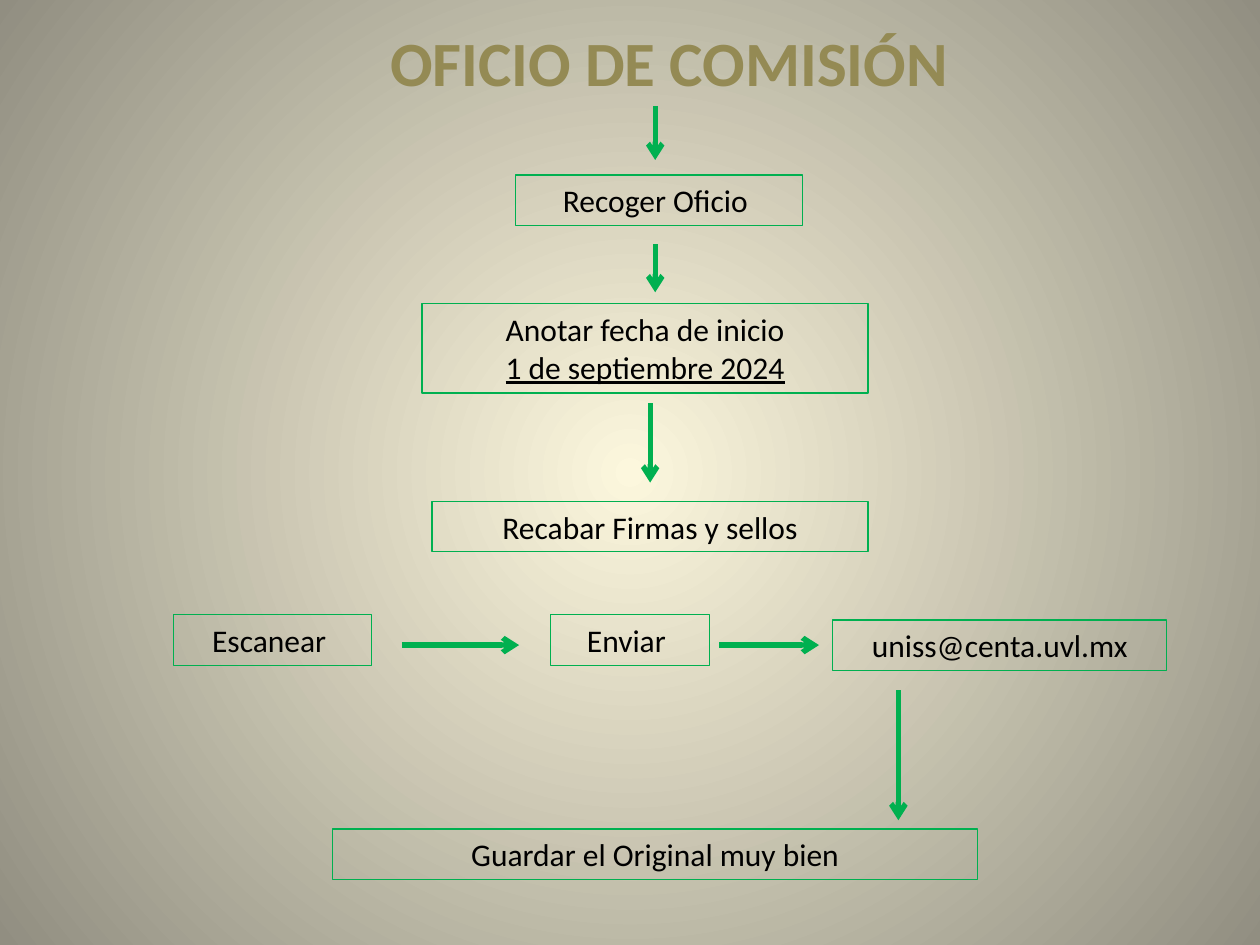
from typing import NamedTuple

import lxml.etree
import pptx
import pptx.dml.color
import pptx.enum.shapes
import pptx.enum.text
import pptx.oxml
import pptx.oxml.ns
import pptx.util

Inches = pptx.util.Inches
Pt = pptx.util.Pt
RGBColor = pptx.dml.color.RGBColor
qn = pptx.oxml.ns.qn

GREEN = RGBColor(0x00, 0xB0, 0x50)
OLIVE = RGBColor(0x94, 0x8A, 0x54)
BLACK = RGBColor(0x00, 0x00, 0x00)
CREAM = RGBColor(0xFC, 0xF7, 0xDD)
GRAY = RGBColor(0x91, 0x8E, 0x81)
FONT = "Calibri"


class Step(NamedTuple):
    left: float
    top: float
    width: float
    lines: tuple[str, ...]
    height: float = 0.4


class Arrow(NamedTuple):
    start: tuple[float, float]
    end: tuple[float, float]


STEPS = (
    Step(4.09, 1.39, 2.28, ("Recoger Oficio ",)),
    Step(3.35, 2.41, 3.54, ("Anotar fecha de inicio", "1 de septiembre 2024"), 0.71),
    Step(3.43, 3.98, 3.46, ("Recabar Firmas y sellos",)),
    Step(1.38, 4.88, 1.57, ("Escanear ",)),
    Step(4.37, 4.88, 1.26, ("Enviar ",)),
    Step(6.61, 4.92, 2.65, ("uniss@centa.uvl.mx",)),
    Step(2.64, 6.58, 5.12, ("Guardar el Original muy bien",)),
)

ARROWS = (
    Arrow((5.2, 0.84), (5.2, 1.27)),
    Arrow((5.2, 1.94), (5.2, 2.32)),
    Arrow((5.16, 3.2), (5.16, 3.83)),
    Arrow((3.19, 5.12), (4.12, 5.12)),
    Arrow((5.71, 5.12), (6.5, 5.12)),
    Arrow((7.13, 5.48), (7.13, 6.51)),
)


def write_text(shape, lines: tuple[str, ...], *, size: float = 18,
               color: RGBColor = BLACK, bold: bool = False) -> None:
    frame = shape.text_frame
    frame.word_wrap = True
    frame.auto_size = pptx.enum.text.MSO_AUTO_SIZE.SHAPE_TO_FIT_TEXT
    frame.vertical_anchor = pptx.enum.text.MSO_ANCHOR.TOP
    for index, line in enumerate(lines):
        paragraph = frame.add_paragraph() if index else frame.paragraphs[0]
        paragraph.alignment = pptx.enum.text.PP_ALIGN.CENTER
        run = paragraph.add_run()
        run.text = line
        run.font.name = FONT
        run.font.size = Pt(size)
        run.font.bold = bold
        run.font.underline = index > 0
        run.font.color.rgb = color


def paint_background(slide) -> None:
    fill = slide.background.fill
    fill.gradient()
    for stop, color in zip(fill.gradient_stops, (CREAM, GRAY)):
        stop.color.rgb = color
    gradient = slide.element.find(".//" + qn("a:gradFill"))
    gradient.remove(gradient.find(qn("a:lin")))
    path = lxml.etree.SubElement(gradient, qn("a:path"), path="circle")
    center = dict.fromkeys("ltrb", "50000")
    lxml.etree.SubElement(path, qn("a:fillToRect"), center)


def add_title(slide) -> None:
    title = slide.shapes.title
    title.left, title.top = Inches(2.95), Inches(0.14)
    title.width, title.height = Inches(4.72), Inches(0.71)
    write_text(title, ("OFICIO DE COMISIÓN",), size=36, color=OLIVE, bold=True)


def add_step(slide, step: Step) -> None:
    shape = slide.shapes.add_shape(
        pptx.enum.shapes.MSO_SHAPE.RECTANGLE,
        Inches(step.left), Inches(step.top), Inches(step.width), Inches(step.height))
    shape.shadow.inherit = False
    shape.fill.background()
    shape.line.color.rgb = GREEN
    shape.line.width = Pt(0.75)
    write_text(shape, step.lines)


def add_arrow(slide, arrow: Arrow) -> None:
    connector = slide.shapes.add_connector(
        pptx.enum.shapes.MSO_CONNECTOR.STRAIGHT,
        *map(Inches, arrow.start + arrow.end))
    connector.line.color.rgb = GREEN
    connector.line.width = Pt(3)
    properties = connector.element.spPr
    lxml.etree.SubElement(properties.find(qn("a:ln")), qn("a:tailEnd"), type="arrow")
    lxml.etree.SubElement(properties, qn("a:effectLst"))


def main() -> None:
    presentation = pptx.Presentation()
    presentation.slide_width = Inches(10)
    presentation.slide_height = Inches(7.5)
    slide = presentation.slides.add_slide(presentation.slide_layouts[5])
    paint_background(slide)
    add_title(slide)
    for step in STEPS:
        add_step(slide, step)
    for arrow in ARROWS:
        add_arrow(slide, arrow)
    presentation.save("out.pptx")


if __name__ == "__main__":
    main()
